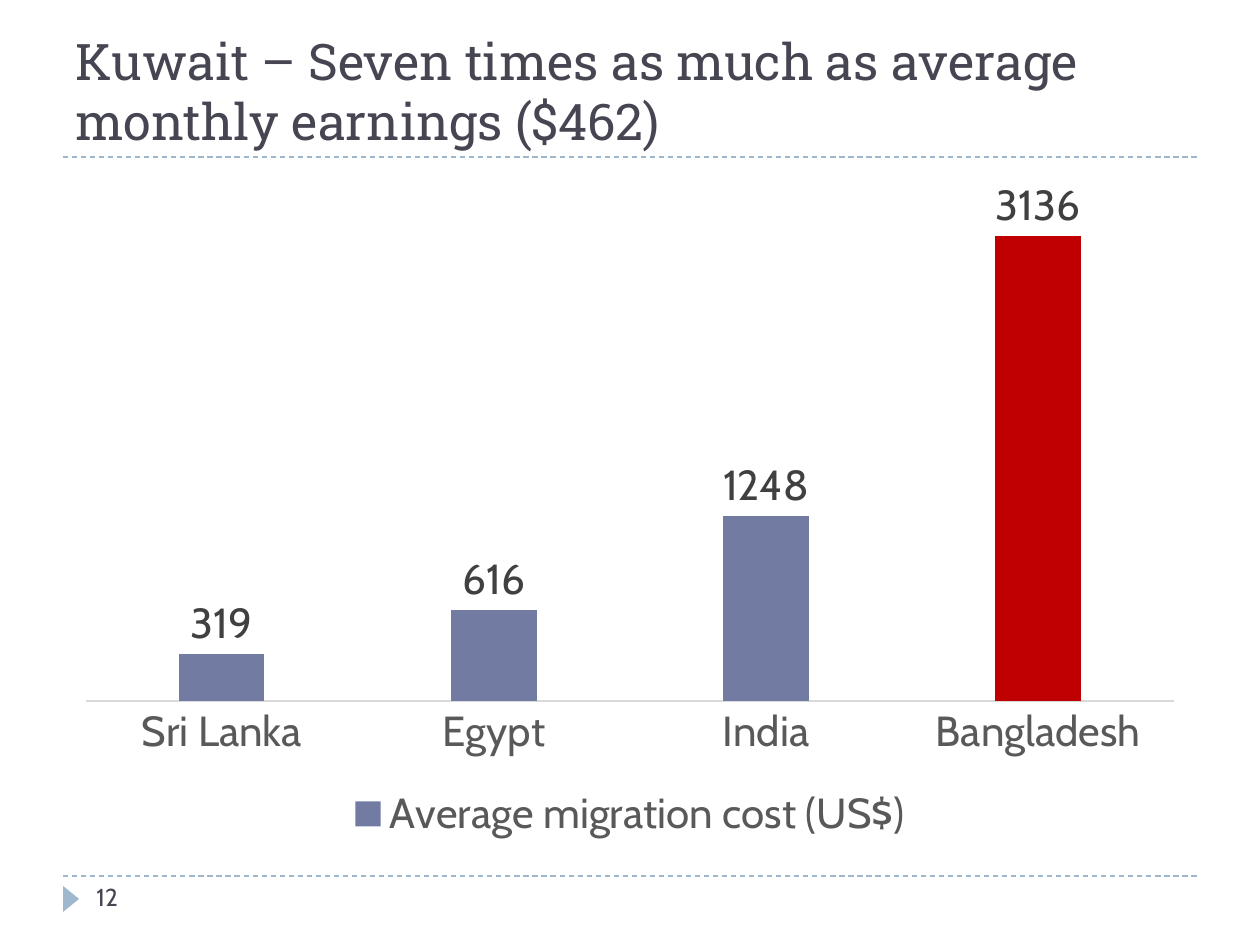
import pptx
import pptx.util
import pptx.chart.data
import pptx.dml.color
import pptx.enum.chart
import pptx.enum.dml
import pptx.enum.shapes
import pptx.enum.text
import pptx.oxml
from dataclasses import dataclass

HEADLINE = "Kuwait – Seven times as much as average monthly earnings ($462)"
PAGE_NUMBER = "12"
COST_LABEL = "Average migration cost (US$)"
COSTS = {"Sri Lanka": 319, "Egypt": 616, "India": 1248, "Bangladesh": 3136}
HIGHLIGHT = "Bangladesh"

PX = pptx.util.Inches(1) // 126
SLIDE = (1260, 945)
MARGIN = 63
RULES_Y = (157, 876)
HEADLINE_BOX = (MARGIN, 21, 1134, 136)
COST_BOX = (MARGIN, 168, 1134, 680)
MARKER_BOX = (58, 891, 26, 16)
PAGE_BOX = (84, 876, 273, 50)


@dataclass(frozen=True)
class Theme:
    heading_font: str = "Roboto Slab"
    body_font: str = "Cabin"
    ink: str = "464653"
    accent: str = "9FB8CD"
    bar: str = "727CA3"
    highlight: str = "C00000"
    axis_text: str = "595959"
    value_text: str = "404040"
    axis_line: str = "D9D9D9"
    headline_size: float = 28.8
    chart_size: int = 24
    page_size: int = 14
    rule_width: float = 0.75


THEME = Theme()


def px(*lengths):
    return [length * PX for length in lengths]


def rgb(code):
    return pptx.dml.color.RGBColor.from_string(code)


def style(font, name, size, color):
    font.name = name
    font.size = pptx.util.Pt(size)
    font.color.rgb = rgb(color)
    font.bold = False


def paint(fill, color):
    fill.solid()
    fill.fore_color.rgb = rgb(color)


def add_headline(slide):
    headline = slide.shapes.title
    headline.left, headline.top, headline.width, headline.height = px(*HEADLINE_BOX)
    frame = headline.text_frame
    frame.word_wrap = True
    frame.auto_size = pptx.enum.text.MSO_AUTO_SIZE.NONE
    frame.vertical_anchor = pptx.enum.text.MSO_ANCHOR.BOTTOM
    paragraph = frame.paragraphs[0]
    paragraph.alignment = pptx.enum.text.PP_ALIGN.LEFT
    run = paragraph.add_run()
    run.text = HEADLINE
    style(run.font, THEME.heading_font, THEME.headline_size, THEME.ink)


def add_rule(slide, y):
    rule = slide.shapes.add_connector(
        pptx.enum.shapes.MSO_CONNECTOR.STRAIGHT, *px(MARGIN, y, SLIDE[0] - MARGIN, y))
    rule.line.color.rgb = rgb(THEME.accent)
    rule.line.width = pptx.util.Pt(THEME.rule_width)
    rule.line.dash_style = pptx.enum.dml.MSO_LINE.DASH
    rule._element.spPr.append(pptx.oxml.parse_xml(
        '<a:effectLst xmlns:a="http://schemas.openxmlformats.org/drawingml/2006/main"/>'))


def add_page_number(slide):
    marker = slide.shapes.add_shape(
        pptx.enum.shapes.MSO_SHAPE.ISOSCELES_TRIANGLE, *px(*MARKER_BOX))
    marker.rotation = 90
    marker.shadow.inherit = False
    paint(marker.fill, THEME.accent)
    marker.line.fill.background()

    frame = slide.shapes.add_textbox(*px(*PAGE_BOX)).text_frame
    frame.word_wrap = True
    run = frame.paragraphs[0].add_run()
    run.text = PAGE_NUMBER
    style(run.font, THEME.body_font, THEME.page_size, THEME.ink)


def add_cost_chart(slide):
    costs = pptx.chart.data.CategoryChartData(number_format="0")
    costs.categories = list(COSTS)
    costs.add_series(COST_LABEL, list(COSTS.values()))
    chart = slide.shapes.add_chart(
        pptx.enum.chart.XL_CHART_TYPE.COLUMN_CLUSTERED, *px(*COST_BOX), costs).chart
    style(chart.font, THEME.body_font, THEME.chart_size, THEME.axis_text)
    chart.has_title = False
    chart.has_legend = True
    chart.legend.position = pptx.enum.chart.XL_LEGEND_POSITION.BOTTOM
    chart.legend.include_in_layout = False
    style(chart.legend.font, THEME.body_font, THEME.chart_size, THEME.axis_text)

    countries = chart.category_axis
    countries.major_tick_mark = pptx.enum.chart.XL_TICK_MARK.NONE
    countries.format.line.color.rgb = rgb(THEME.axis_line)
    countries.format.line.width = pptx.util.Pt(THEME.rule_width)
    style(countries.tick_labels.font, THEME.body_font, THEME.chart_size, THEME.axis_text)
    chart.value_axis.visible = False
    chart.value_axis.has_major_gridlines = False

    plot = chart.plots[0]
    plot.gap_width = 219
    plot.overlap = -27
    plot.vary_by_categories = False
    bars = plot.series[0]
    bars.invert_if_negative = False
    paint(bars.format.fill, THEME.bar)
    paint(bars.points[list(COSTS).index(HIGHLIGHT)].format.fill, THEME.highlight)

    labels = bars.data_labels
    labels.show_value = True
    labels.number_format = "0"
    labels.number_format_is_linked = False
    labels.position = pptx.enum.chart.XL_LABEL_POSITION.OUTSIDE_END
    style(labels.font, THEME.body_font, THEME.chart_size, THEME.value_text)


def main():
    deck = pptx.Presentation()
    deck.slide_width, deck.slide_height = px(*SLIDE)
    slide = deck.slides.add_slide(deck.slide_layouts.get_by_name("Title Only"))
    for y in RULES_Y:
        add_rule(slide, y)
    add_headline(slide)
    add_page_number(slide)
    add_cost_chart(slide)
    deck.save("out.pptx")


if __name__ == "__main__":
    main()
